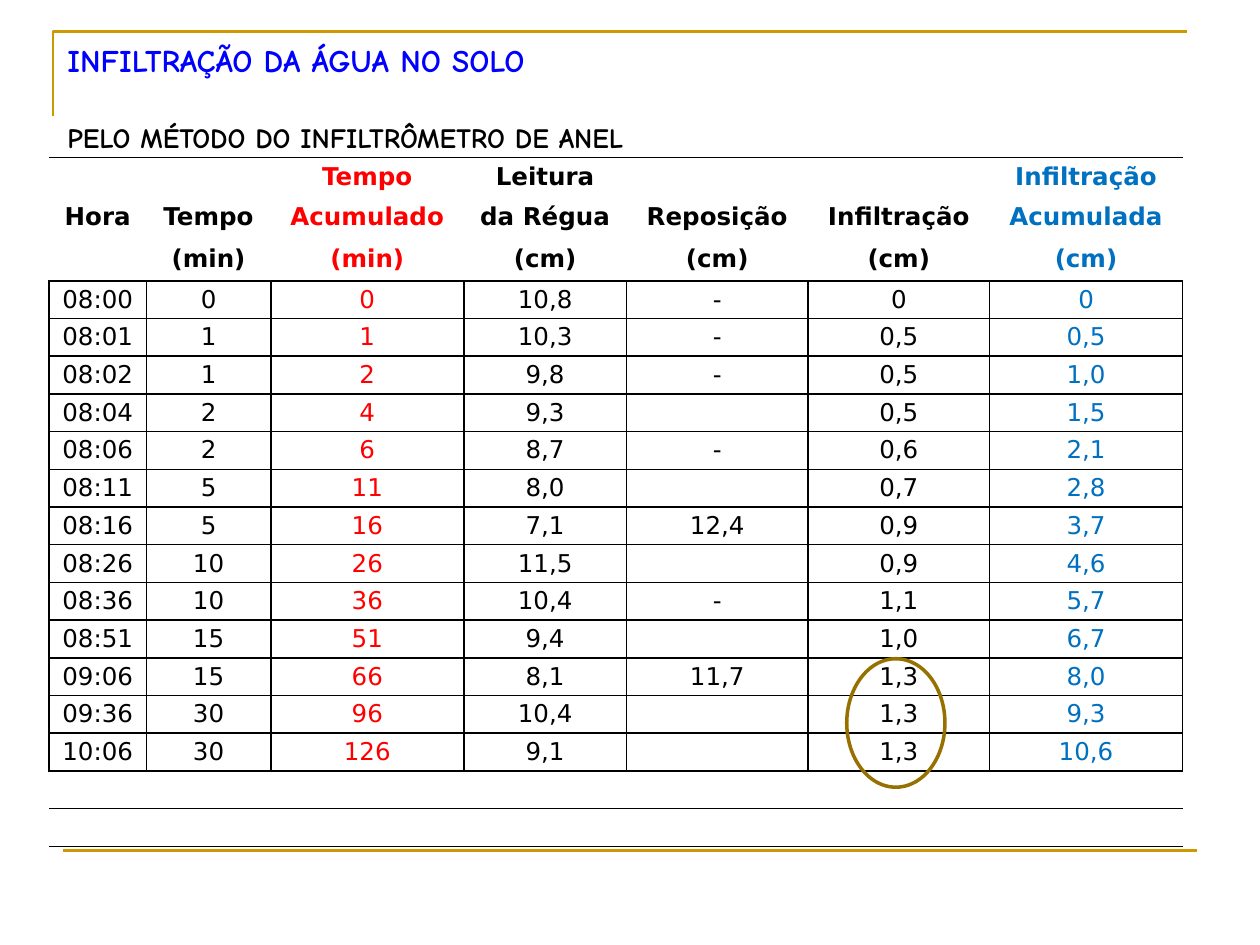
from lxml import etree
from pptx import Presentation
from pptx.dml.color import RGBColor
from pptx.enum.shapes import MSO_CONNECTOR, MSO_SHAPE
from pptx.enum.text import MSO_ANCHOR, PP_ALIGN
from pptx.oxml.ns import qn
from pptx.util import Cm, Pt

CENTER = PP_ALIGN.CENTER
MIDDLE = MSO_ANCHOR.MIDDLE
STRAIGHT = MSO_CONNECTOR.STRAIGHT
ELLIPSE = MSO_SHAPE.OVAL

BLACK, RED, BLUE = "000000", "FF0000", "0070C0"
GOLD, DARK_GOLD, TITLE_BLUE = "CC9900", "977100", "0000FF"
HEADING_FONT, TABLE_FONT = "Comic Neue", "DejaVu Sans"
NO_GRID_STYLE = "{2D5ABB26-0587-4C30-8999-92F81FD0307C}"

COLUMN_WIDTHS = [1.96, 2.51, 3.89, 3.28, 3.66, 3.66, 3.89]
COLUMN_COLORS = [BLACK, BLACK, RED, BLACK, BLACK, BLACK, BLUE]
ROW_HEIGHT, TALL_ROW_HEIGHT = 0.76, 0.86
TALL_ROWS = (1, 2)
HEADER = [
    ["", "", "Tempo", "Leitura", "", "", "Infiltração"],
    ["Hora", "Tempo", "Acumulado", "da Régua", "Reposição", "Infiltração", "Acumulada"],
    ["", "(min)", "(min)", "(cm)", "(cm)", "(cm)", "(cm)"],
]
READINGS = [
    ["08:00", "0", "0", "10,8", "-", "0", "0"],
    ["08:01", "1", "1", "10,3", "-", "0,5", "0,5"],
    ["08:02", "1", "2", "9,8", "-", "0,5", "1,0"],
    ["08:04", "2", "4", "9,3", "", "0,5", "1,5"],
    ["08:06", "2", "6", "8,7", "-", "0,6", "2,1"],
    ["08:11", "5", "11", "8,0", "", "0,7", "2,8"],
    ["08:16", "5", "16", "7,1", "12,4", "0,9", "3,7"],
    ["08:26", "10", "26", "11,5", "", "0,9", "4,6"],
    ["08:36", "10", "36", "10,4", "-", "1,1", "5,7"],
    ["08:51", "15", "51", "9,4", "", "1,0", "6,7"],
    ["09:06", "15", "66", "8,1", "11,7", "1,3", "8,0"],
    ["09:36", "30", "96", "10,4", "", "1,3", "9,3"],
    ["10:06", "30", "126", "9,1", "", "1,3", "10,6"],
]
FOOTER = [[""] * len(COLUMN_WIDTHS)] * 2


def rgb(color):
    return RGBColor.from_string(color)


def set_attributes(target, values):
    for name, value in values.items():
        setattr(target, name, value)


def style_line(shape, color, points):
    shape.line.color.rgb = rgb(color)
    shape.line.width = Pt(points)


def style_font(font, name, size, color, bold):
    set_attributes(font, {"name": name, "size": Pt(size), "bold": bold})
    font.color.rgb = rgb(color)


def add_corner_frame(slide, left, top, width, height):
    """Draw the open corner along the left and top edges of the box."""
    builder = slide.shapes.build_freeform(Cm(left), Cm(top + height))
    builder.add_line_segments(
        [(Cm(left), Cm(top)), (Cm(left + width), Cm(top))], close=False)
    corner = builder.convert_to_shape()
    corner.shadow.inherit = False
    corner.fill.background()
    style_line(corner, GOLD, 1.5)


def add_footer_rule(slide, left, top, width):
    rule = slide.shapes.add_connector(
        STRAIGHT, Cm(left), Cm(top), Cm(left + width), Cm(top))
    etree.SubElement(rule._element.spPr, qn("a:effectLst"))
    style_line(rule, GOLD, 1.5)


def add_heading(slide, left, top, width, height, text, size, color):
    frame = slide.shapes.add_textbox(
        Cm(left), Cm(top), Cm(width), Cm(height)).text_frame
    set_attributes(frame, {"word_wrap": True, "margin_left": Cm(0.47)})
    run = frame.paragraphs[0].add_run()
    run.text = text
    style_font(run.font, HEADING_FONT, size, color, True)


def set_borders(cell, borders):
    """Draw borders given as {side: points}, with sides L, R, T, B in that order."""
    properties = cell._tc.get_or_add_tcPr()
    for position, (side, points) in enumerate(borders.items()):
        line = etree.Element(qn(f"a:ln{side}"), w=str(Pt(points)))
        fill = etree.SubElement(line, qn("a:solidFill"))
        etree.SubElement(fill, qn("a:srgbClr"), val=BLACK)
        properties.insert(position, line)


def row_borders(row, row_count):
    first_reading = len(HEADER)
    first_footer = first_reading + len(READINGS)
    if first_reading <= row < first_footer:
        return dict.fromkeys("LRTB", 1)
    return {0: {"T": 0.5}, first_reading - 1: {"B": 1},
            first_footer: {"T": 1}, row_count - 1: {"B": 0.5}}.get(row, {})


def fill_cell(cell, text, color, bold):
    set_attributes(cell, {"vertical_anchor": MIDDLE, "margin_left": 0,
                          "margin_right": 0, "margin_top": 0, "margin_bottom": 0})
    cell.fill.background()
    paragraph = cell.text_frame.paragraphs[0]
    paragraph.alignment = CENTER
    if text:
        run = paragraph.add_run()
        run.text = text
        style_font(run.font, TABLE_FONT, 14, color, bold)
    else:
        paragraph._p.get_or_add_endParaRPr().set("sz", "1400")


def add_readings_table(slide, left, top):
    rows = HEADER + READINGS + FOOTER
    heights = [TALL_ROW_HEIGHT if row in TALL_ROWS else ROW_HEIGHT
               for row in range(len(rows))]
    table = slide.shapes.add_table(
        len(rows), len(COLUMN_WIDTHS), Cm(left), Cm(top),
        Cm(sum(COLUMN_WIDTHS)), Cm(sum(heights))).table
    set_attributes(table, {"first_row": False, "horz_banding": False})
    table._tbl.tblPr.find(qn("a:tableStyleId")).text = NO_GRID_STYLE
    for column, width in zip(table.columns, COLUMN_WIDTHS):
        column.width = Cm(width)
    for row, (texts, height) in enumerate(zip(rows, heights)):
        table.rows[row].height = Cm(height)
        for column, (text, color) in enumerate(zip(texts, COLUMN_COLORS)):
            cell = table.cell(row, column)
            fill_cell(cell, text, color, row < len(HEADER))
            set_borders(cell, row_borders(row, len(rows)))


def add_stable_rate_ring(slide, left, top, width, height):
    ring = slide.shapes.add_shape(
        ELLIPSE, Cm(left), Cm(top), Cm(width), Cm(height))
    ring.shadow.inherit = False
    ring.fill.background()
    style_line(ring, DARK_GOLD, 2)


def main():
    presentation = Presentation()
    set_attributes(presentation, {"slide_width": Cm(25.4), "slide_height": Cm(19.05)})
    slide = presentation.slides.add_slide(presentation.slide_layouts[6])
    add_corner_frame(slide, 1.07, 0.64, 22.86, 1.7)
    add_footer_rule(slide, 1.27, 17.15, 22.86)
    add_heading(slide, 0.89, 0.71, 13.21, 1.02,
                "INFILTRAÇÃO DA ÁGUA NO SOLO", 18, TITLE_BLUE)
    add_heading(slide, 0.89, 2.31, 24, 0.94,
                "PELO MÉTODO DO INFILTRÔMETRO DE ANEL", 16, BLACK)
    add_readings_table(slide, 0.99, 3.18)
    add_stable_rate_ring(slide, 17.07, 13.28, 1.98, 2.59)
    presentation.save("out.pptx")


if __name__ == "__main__":
    main()
